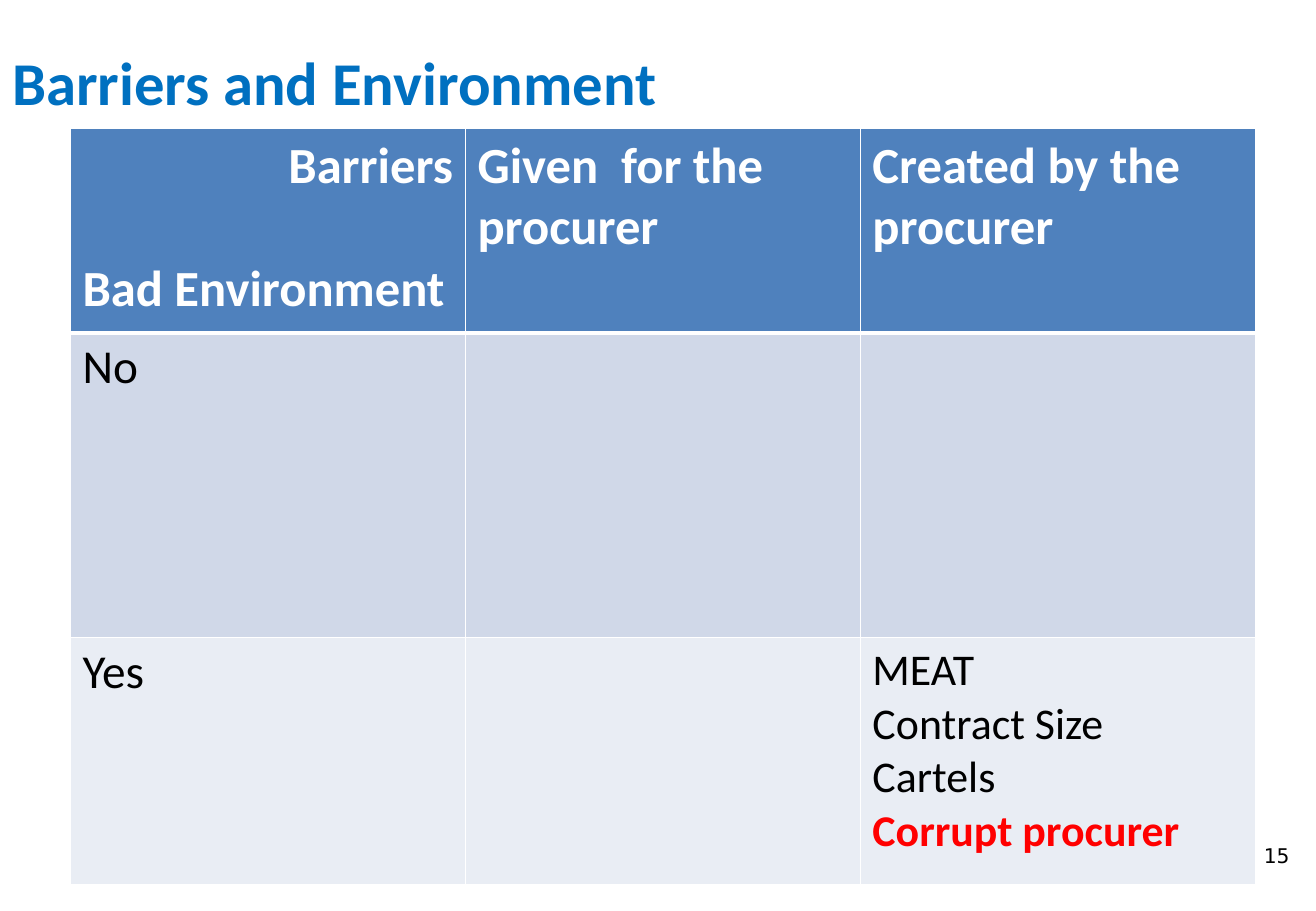
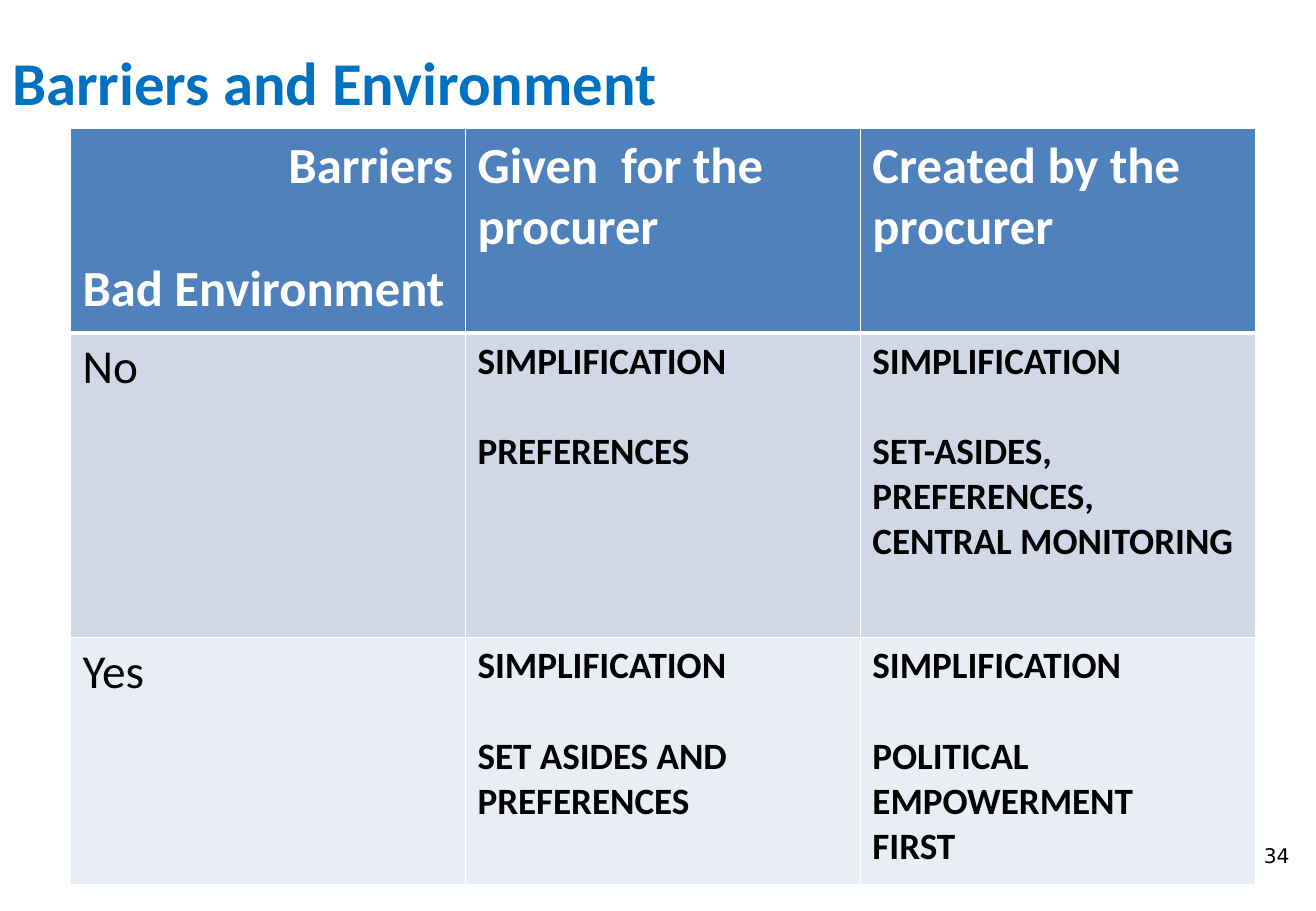
from pptx import Presentation
from pptx.dml.color import RGBColor
from pptx.enum.text import MSO_ANCHOR, PP_ALIGN
from pptx.oxml import parse_xml
from pptx.oxml.ns import nsdecls
from pptx.util import Inches, Pt

BLUE = RGBColor(0x00, 0x70, 0xC0)
HEAD = RGBColor(0x4F, 0x81, 0xBD)
BAND = RGBColor(0xD0, 0xD8, 0xE8)
PALE = RGBColor(0xE9, 0xED, 0xF4)
WHITE = RGBColor(0xFF, 0xFF, 0xFF)
BLACK = RGBColor(0x00, 0x00, 0x00)
RED = RGBColor(0xFF, 0x00, 0x00)

FILLS = [HEAD, BAND, PALE]
ROWS = [1.68, 2.51, 2.03]
COL = 3.25


def add_run(para, text, size, color, bold=False, font="Calibri"):
    run = para.add_run()
    run.text = text
    run.font.name = font
    run.font.size = Pt(size)
    run.font.bold = bold
    run.font.color.rgb = color


def add_edge(cell, spot, side, width):
    line = parse_xml(
        f'<a:{side} {nsdecls("a")} w="{Pt(width)}"><a:solidFill>'
        f'<a:srgbClr val="{WHITE}"/></a:solidFill></a:{side}>')
    cell._tc.get_or_add_tcPr().insert(spot, line)


# A cell is a list of lines: text, size, colour, bold, space before
def lines(size, color, bold, *texts, gap=0):
    return [(text, size, color, bold, gap if n == 1 else 0)
            for n, text in enumerate(texts)]


# Cells that both slides share
TOP = [
    lines(30, WHITE, True, "Barriers", "Bad Environment", gap=36.6),
    lines(30, WHITE, True, "Given  for the procurer"),
    lines(30, WHITE, True, "Created by the procurer"),
]
NO = lines(28, BLACK, False, "No")
YES = lines(28, BLACK, False, "Yes")

# Cells of each slide, by page number
causes = (lines(26, BLACK, False, "MEAT", "Contract Size", "Cartels")
          + lines(26, RED, True, "Corrupt procurer"))
cures = [
    ["PREFERENCES"],
    ["SET-ASIDES, PREFERENCES,", "CENTRAL MONITORING"],
    ["SET ASIDES AND PREFERENCES"],
    ["POLITICAL EMPOWERMENT", "FIRST"],
]
steps = [lines(22, BLACK, True, "SIMPLIFICATION", *cure, gap=26.8)
         for cure in cures]
PAGES = {
    "15": [TOP, [NO, [], []], [YES, [], causes]],
    "34": [TOP, [NO, *steps[:2]], [YES, *steps[2:]]],
}

deck = Presentation()
deck.slide_width, deck.slide_height = Inches(10.83), Inches(7.5)

for page, grid in PAGES.items():
    slide = deck.slides.add_slide(deck.slide_layouts[5])

    # Title
    title = slide.shapes.title
    title.left, title.top = Inches(0), Inches(0.24)
    title.width, title.height = Inches(9.75), Inches(0.86)
    frame = title.text_frame
    frame.vertical_anchor = MSO_ANCHOR.MIDDLE
    frame.paragraphs[0].alignment = PP_ALIGN.LEFT
    add_run(frame.paragraphs[0], "Barriers and Environment", 36, BLUE, True)

    # Page number
    box = slide.shapes.add_textbox(
        Inches(10.4), Inches(6.94), Inches(0.45), Inches(0.2))
    frame = box.text_frame
    frame.word_wrap = True
    frame.margin_left = frame.margin_right = 0
    frame.margin_top = frame.margin_bottom = 0
    add_run(frame.paragraphs[0], page, 12, BLACK, font="DejaVu Sans")

    # Table
    table = slide.shapes.add_table(
        3, 3, Inches(0.58), Inches(1.06),
        Inches(3 * COL), Inches(sum(ROWS))).table
    table.horz_banding = False
    for col in table.columns:
        col.width = Inches(COL)
    for r, row in enumerate(grid):
        table.rows[r].height = Inches(ROWS[r])
        for c, items in enumerate(row):
            cell = table.cell(r, c)
            cell.fill.solid()
            cell.fill.fore_color.rgb = FILLS[r]
            edges = {"lnL": 1, "lnR": 1,
                     "lnT": 3 if r == 1 else 1, "lnB": 3 if r == 0 else 1}
            for spot, (side, width) in enumerate(edges.items()):
                add_edge(cell, spot, side, width)
            for n, (text, size, color, bold, gap) in enumerate(items):
                frame = cell.text_frame
                para = frame.add_paragraph() if n else frame.paragraphs[0]
                if gap:
                    para.space_before = Pt(gap)
                add_run(para, text, size, color, bold)

    # The corner cell names the columns at its right
    corner = table.cell(0, 0).text_frame
    corner.paragraphs[0].alignment = PP_ALIGN.RIGHT

deck.save("out.pptx")
